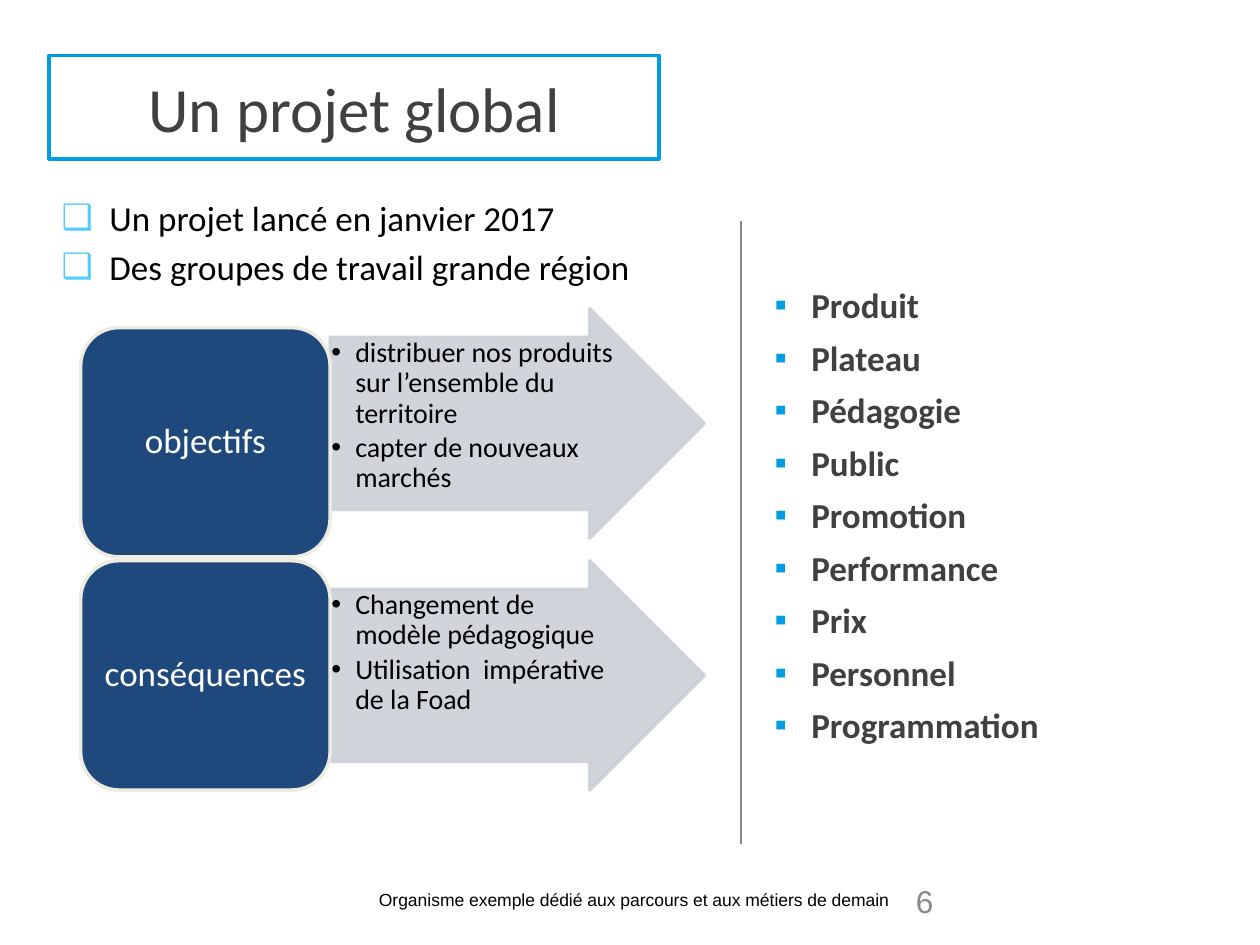
from lxml import etree
from pptx import Presentation
from pptx.dml.color import RGBColor
from pptx.enum.shapes import MSO_CONNECTOR, MSO_SHAPE
from pptx.enum.text import MSO_ANCHOR, MSO_AUTO_SIZE, PP_ALIGN
from pptx.oxml.ns import qn
from pptx.util import Emu, Pt

ARROW, ROUNDED = MSO_SHAPE.RIGHT_ARROW, MSO_SHAPE.ROUNDED_RECTANGLE
STRAIGHT = MSO_CONNECTOR.STRAIGHT
TOP, MIDDLE = MSO_ANCHOR.TOP, MSO_ANCHOR.MIDDLE
LEFT, CENTER, JUSTIFY = PP_ALIGN.LEFT, PP_ALIGN.CENTER, PP_ALIGN.JUSTIFY
NO_FIT = MSO_AUTO_SIZE.NONE
EMU_PER_PX = 9144

COLORS = {
    "white": "FFFFFF", "black": "000000", "text": "404040", "gray": "898989",
    "blue": "009EE0", "sky": "53CCFF", "navy": "1F497D", "cream": "EEECE1",
    "arrow": "CDD0D7",
}
TITLE = "Un projet global"
INTRO = ["Un projet lancé en janvier 2017", "Des groupes de travail grande région"]
THEMES = ["Produit", "Plateau", "Pédagogie", "Public", "Promotion",
          "Performance", "Prix", "Personnel", "Programmation"]
STEPS = [
    {"label": "objectifs", "block_top": 260, "arrow_top": 245,
     "points": ["distribuer nos produits sur l’ensemble du territoire",
                "capter de nouveaux marchés"]},
    {"label": "conséquences", "block_top": 445, "arrow_top": 445,
     "points": ["Changement de modèle pédagogique",
                "Utilisation  impérative de la Foad"]},
]
FOOTER = "Organisme exemple dédié aux parcours et aux métiers de demain"
PAGE_NUMBER = "6"
BLOCK_LEFT, BLOCK_WIDTH, ARROW_WIDTH, STEP_HEIGHT = 64, 198, 297, 182


def px(value):
    return Emu(round(value * EMU_PER_PX))


def rgb(name):
    return RGBColor.from_string(COLORS[name])


def add_bullet(para, char, color, indent):
    props = para._p.get_or_add_pPr()
    props.set("marL", str(px(indent)))
    props.set("indent", str(-px(indent)))
    tint = etree.SubElement(props, qn("a:buClr"))
    etree.SubElement(tint, qn("a:srgbClr"), val=COLORS[color])
    etree.SubElement(props, qn("a:buFont"), typeface="Arial")
    etree.SubElement(props, qn("a:buChar"), char=char)


def write(shape, lines, size, color, font="Calibri", bold=False, align=LEFT,
          anchor=TOP, insets=(10, 5), line_spacing=None, before=0, after=0,
          bullet=None):
    frame = shape.text_frame
    frame.word_wrap = True
    frame.auto_size = NO_FIT
    frame.vertical_anchor = anchor
    frame.margin_left = frame.margin_right = px(insets[0])
    frame.margin_top = frame.margin_bottom = px(insets[1])
    for index, line in enumerate(lines):
        para = frame.add_paragraph() if index else frame.paragraphs[0]
        if bullet:
            add_bullet(para, *bullet)
        para.alignment = align
        para.space_before = Pt(before if index else 0)
        para.space_after = Pt(after)
        if line_spacing:
            para.line_spacing = line_spacing
        span = para.add_run()
        span.text = line
        span.font.name = font
        span.font.size = Pt(size)
        span.font.bold = bold
        span.font.color.rgb = rgb(color)


def add_text(slide, place, lines, **style):
    box = slide.shapes.add_textbox(*map(px, place))
    write(box, lines, **style)


def paint(shape, fill, line):
    shape.fill.solid()
    shape.fill.fore_color.rgb = rgb(fill)
    shape.line.color.rgb = rgb(line)
    shape.line.width = Pt(2)


def add_shape(slide, kind, place, fill, line):
    shape = slide.shapes.add_shape(kind, *map(px, place))
    shape.shadow.inherit = False
    paint(shape, fill, line)
    return shape


def add_step(slide, step):
    arrow = add_shape(slide, ARROW, (BLOCK_LEFT + BLOCK_WIDTH, step["arrow_top"],
                                     ARROW_WIDTH, STEP_HEIGHT), "arrow", "arrow")
    arrow.adjustments[0] = 0.75
    arrow.adjustments[1] = 0.5
    for tint in arrow._element.spPr.iter(qn("a:srgbClr")):
        etree.SubElement(tint, qn("a:alpha"), val="90000")
    write(arrow, step["points"], size=16, color="black", insets=(1, 1),
          line_spacing=0.9, after=2.4, bullet=("•", "black", 19))
    block = add_shape(slide, ROUNDED, (BLOCK_LEFT, step["block_top"],
                                       BLOCK_WIDTH, STEP_HEIGHT), "navy", "cream")
    write(block, [step["label"]], size=20, color="white", align=CENTER,
          anchor=MIDDLE, insets=(8, 4), line_spacing=0.9)


def main():
    deck = Presentation()
    deck.slide_width, deck.slide_height = px(1000), px(750)
    page = deck.slides.add_slide(deck.slide_layouts[5])

    title = page.shapes.title
    title.left, title.top, title.width, title.height = map(px, (39, 44, 484, 82))
    paint(title, "white", "blue")
    write(title, [TITLE], size=36, color="text", align=CENTER, anchor=MIDDLE)

    divider = page.shapes.add_connector(STRAIGHT, px(588), px(175), px(588), px(670))
    divider.line.color.rgb = rgb("gray")
    divider.line.width = Pt(1)
    etree.SubElement(divider._element.spPr, qn("a:effectLst"))

    add_text(page, (39, 151, 484, 112), INTRO, size=20, color="black",
             align=JUSTIFY, before=4, bullet=("❑", "sky", 38))
    add_text(page, (605, 217, 345, 453), THEMES, size=20, color="text", bold=True,
             line_spacing=1.1, before=3.6, bullet=("▪", "blue", 29))
    for step in STEPS:
        add_step(page, step)

    add_text(page, (21, 701, 964, 27), [FOOTER], size=10, color="black",
             font="Arial", align=CENTER)
    add_text(page, (717, 695, 233, 40), [PAGE_NUMBER], size=18, color="gray",
             font="Arial")
    deck.save("out.pptx")


if __name__ == "__main__":
    main()
